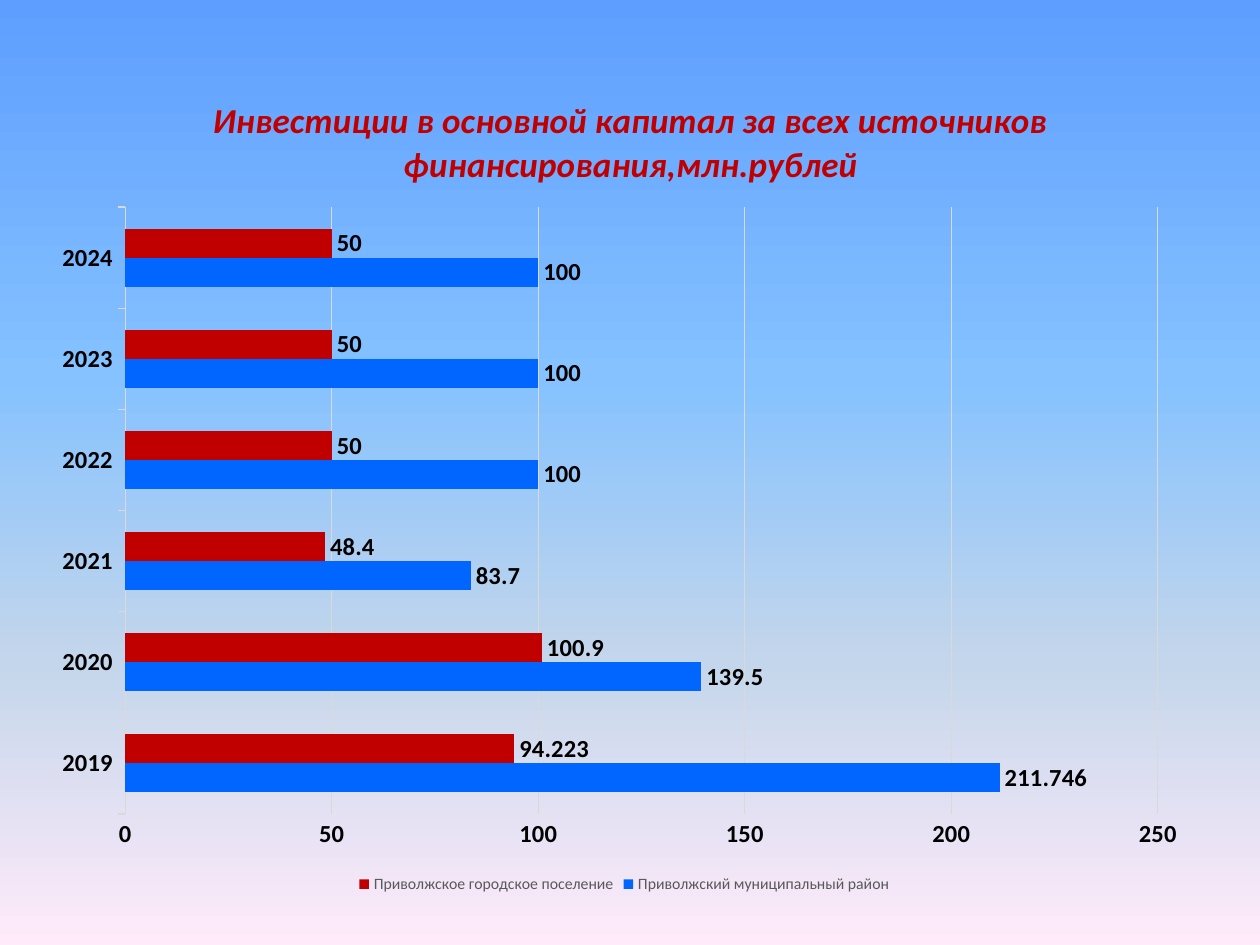
import copy
from dataclasses import dataclass

import pptx
import pptx.chart.data
import pptx.dml.color
import pptx.enum.chart
import pptx.oxml
import pptx.oxml.ns
import pptx.util

Pt = pptx.util.Pt
enum = pptx.enum.chart


@dataclass(frozen=True)
class Theme:
    face: str = "Calibri"
    black: str = "000000"
    red: str = "C00000"
    blue: str = "0066FF"
    gray: str = "595959"
    rule: str = "D9D9D9"
    sky: tuple = ((0, "5E9EFF"), (0.4, "85C2FF"), (0.7, "C4D6EB"), (1, "FFEBFA"))
    head: int = 20
    label: int = 14
    small: int = 9


THEME = Theme()
TITLE = "Инвестиции в основной капитал за всех источников финансирования,млн.рублей"
YEARS = ("2019", "2020", "2021", "2022", "2023", "2024")
SERIES = (
    ("Приволжский муниципальный район", THEME.blue,
     (211.746, 139.5, 83.7, 100, 100, 100)),
    ("Приволжское городское поселение", THEME.red,
     (94.223, 100.9, 48.4, 50, 50, 50)),
)


def rgb(code):
    return pptx.dml.color.RGBColor.from_string(code)


def style(font, size=THEME.label, color=THEME.black, bold=True, italic=False):
    font.name = THEME.face
    font.size = Pt(size)
    font.bold = bold
    font.italic = italic
    font.color.rgb = rgb(color)


def write(frame, text, **form):
    frame.text = text
    style(frame.paragraphs[0].runs[0].font, **form)


def rule(line):
    line.color.rgb = rgb(THEME.rule)
    line.width = Pt(0.75)


def paint(slide):
    """Fill the background with the vertical sky gradient."""
    fill = slide.background.fill
    fill.gradient()
    fill.gradient_angle = 270
    stops = next(slide.element.iter(pptx.oxml.ns.qn("a:gsLst")))
    for spare in range(len(THEME.sky) - len(stops)):
        stops.append(copy.deepcopy(stops[0]))
    for stop, (pos, color) in zip(fill.gradient_stops, THEME.sky):
        stop.position = pos
        stop.color.rgb = rgb(color)


def place(part, inner=False, **box):
    """Give a title or plot a fixed place, in shares of the chart."""
    for old in part.findall(pptx.oxml.ns.qn("c:layout")):
        part.remove(old)
    target = '<c:layoutTarget val="inner"/>' if inner else ""
    modes = "".join(f'<c:{key}Mode val="edge"/>' for key in "xy")
    sizes = "".join(f'<c:{key} val="{val}"/>' for key, val in box.items())
    node = pptx.oxml.parse_xml(
        f'<c:layout {pptx.oxml.ns.nsdecls("c")}><c:manualLayout>'
        f"{target}{modes}{sizes}</c:manualLayout></c:layout>")
    if inner:
        part.insert(0, node)
    else:
        part.find(pptx.oxml.ns.qn("c:tx")).addnext(node)


def add_bars(slide):
    data = pptx.chart.data.CategoryChartData()
    data.categories = YEARS
    for name, color, vals in SERIES:
        data.add_series(name, vals)
    chart = slide.shapes.add_chart(
        enum.XL_CHART_TYPE.BAR_CLUSTERED,
        Pt(25.2), Pt(31.7), Pt(663), Pt(481.7), data).chart
    style(chart.font, size=10, bold=False)
    plot = chart.plots[0]
    plot.gap_width = 150
    plot.overlap = 0
    plot.vary_by_categories = False
    for bars, (name, color, vals) in zip(plot.series, SERIES):
        bars.format.fill.solid()
        bars.format.fill.fore_color.rgb = rgb(color)
        bars.invert_if_negative = False
        labels = bars.data_labels
        labels.show_value = True
        labels.position = enum.XL_LABEL_POSITION.OUTSIDE_END
        style(labels.font)
    return chart


def set_axes(chart):
    cats, vals = chart.category_axis, chart.value_axis
    for axis in (cats, vals):
        style(axis.tick_labels.font)
        axis.minor_tick_mark = enum.XL_TICK_MARK.NONE
    cats.major_tick_mark = enum.XL_TICK_MARK.OUTSIDE
    rule(cats.format.line)
    vals.major_tick_mark = enum.XL_TICK_MARK.NONE
    vals.minimum_scale, vals.maximum_scale, vals.major_unit = 0, 250, 50
    vals.format.line.fill.background()
    rule(vals.major_gridlines.format.line)


def set_texts(chart):
    chart.has_title = True
    title = chart.chart_title
    title.include_in_layout = False
    write(title.text_frame, TITLE, size=THEME.head, color=THEME.red, italic=True)
    chart.has_legend = True
    legend = chart.legend
    legend.position = enum.XL_LEGEND_POSITION.BOTTOM
    legend.include_in_layout = False
    style(legend.font, size=THEME.small, color=THEME.gray, bold=False)


def main():
    deck = pptx.Presentation()
    deck.slide_width, deck.slide_height = Pt(720), Pt(540)
    slide = deck.slides.add_slide(deck.slide_layouts[6])
    paint(slide)
    chart = add_bars(slide)
    set_axes(chart)
    set_texts(chart)
    place(chart.chart_title._element, x=0.14, y=0.04)
    area = next(chart._chartSpace.iter(pptx.oxml.ns.qn("c:plotArea")))
    place(area, inner=True, x=0.07, y=0.18, w=0.89, h=0.72)
    deck.save("out.pptx")


if __name__ == "__main__":
    main()
